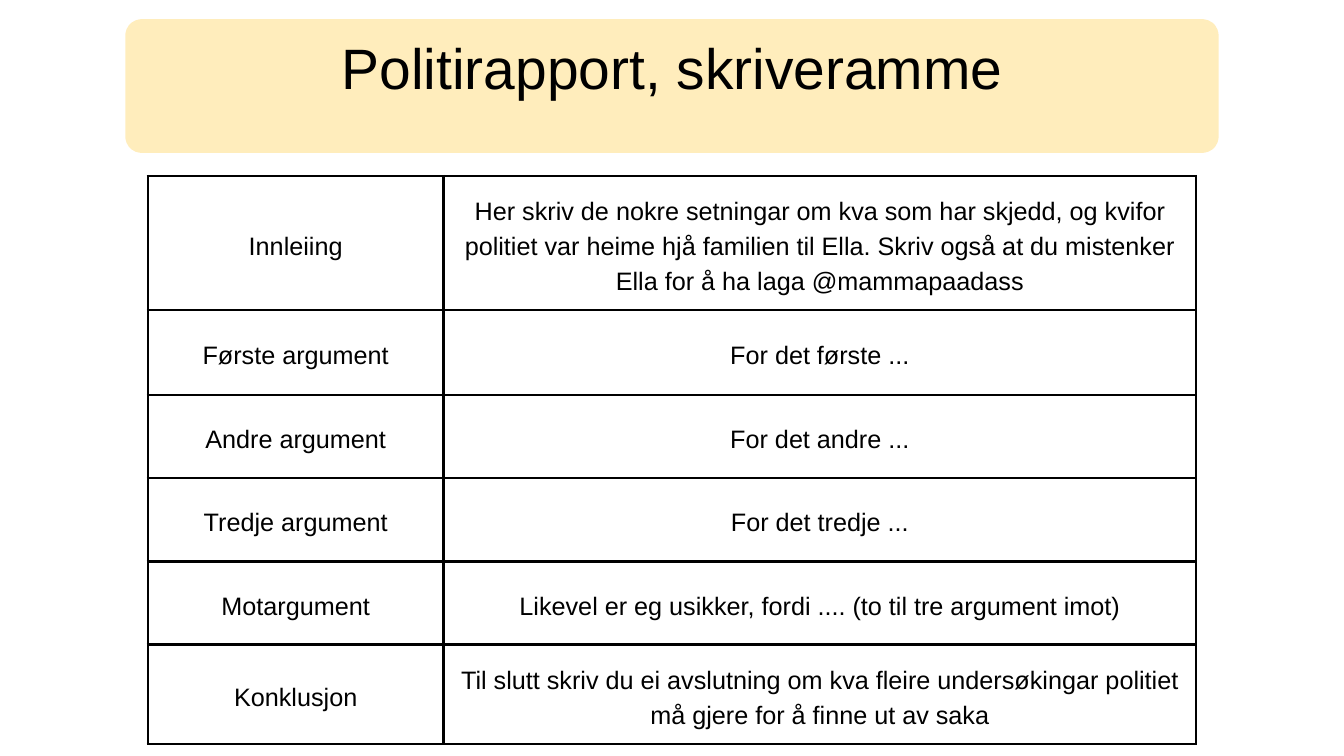
from typing import NamedTuple

from lxml.etree import SubElement
from pptx import Presentation
from pptx.dml.color import RGBColor
from pptx.enum.shapes import MSO_SHAPE
from pptx.enum.text import MSO_ANCHOR, PP_ALIGN
from pptx.oxml.ns import qn
from pptx.util import Pt

PX = 9144  # 100 px to the inch
COLORS = {"ink": "000000", "sand": "FFEDBC"}
SIDES = ("left", "top", "right", "bottom")


class Box(NamedTuple):
    left: int
    top: int
    width: int
    height: int


class Row(NamedTuple):
    height: int
    label: str
    body: str


TITLE = "Politirapport, skriveramme"
BANNER = Box(200, 42, 1600, 172)
HEAD = Box(200, -33, 1600, 247)
GRID = Box(220, 262, 1560, 844)
COLS = (440, 1120)
ROWS = (
    Row(198, "Innleiing",
        "Her skriv de nokre setningar om kva som har skjedd, og kvifor politiet var heime "
        "hjå familien til Ella. Skriv også at du mistenker Ella for å ha laga @mammapaadass"),
    Row(126, "Første argument", "For det første ..."),
    Row(124, "Andre argument", "For det andre ..."),
    Row(124, "Tredje argument", "For det tredje ..."),
    Row(124, "Motargument", "Likevel er eg usikker, fordi .... (to til tre argument imot)"),
    Row(148, "Konklusjon",
        "Til slutt skriv du ei avslutning om kva fleire undersøkingar politiet "
        "må gjere for å finne ut av saka"),
)


def scale(box: Box) -> list[int]:
    return [n * PX for n in box]


def color(name: str) -> RGBColor:
    return RGBColor.from_string(COLORS[name])


def write(frame, text: str, size: int, lead: float) -> None:
    """Put one centred paragraph in a text frame."""
    frame.word_wrap = True
    para = frame.paragraphs[0]
    para.alignment = PP_ALIGN.CENTER
    para.line_spacing = Pt(lead)
    run = para.add_run()
    run.text = text
    for key, value in {"name": "Arial", "size": Pt(size)}.items():
        setattr(run.font, key, value)
    run.font.color.rgb = color("ink")


def inset(owner, gap: int) -> None:
    for side in SIDES:
        setattr(owner, f"margin_{side}", gap * PX)
    owner.vertical_anchor = MSO_ANCHOR.MIDDLE


def frame_cell(cell, width: int) -> None:
    """Draw all four borders of a table cell."""
    props = cell._tc.get_or_add_tcPr()
    for i, tag in enumerate(("a:lnL", "a:lnR", "a:lnT", "a:lnB")):
        line = SubElement(props, qn(tag), w=str(Pt(width)))
        fill = SubElement(line, qn("a:solidFill"))
        SubElement(fill, qn("a:srgbClr"), val=COLORS["ink"])
        props.remove(line)
        props.insert(i, line)


def draw_head(slide) -> None:
    group = slide.shapes.add_group_shape()
    banner = group.shapes.add_shape(MSO_SHAPE.ROUNDED_RECTANGLE, *scale(BANNER))
    banner.adjustments[0] = 0.06
    banner.shadow.inherit = False
    banner.fill.solid()
    for part in (banner.fill.fore_color, banner.line.color):
        part.rgb = color("sand")
    banner.line.width = Pt(19.5)
    frame = group.shapes.add_textbox(*scale(HEAD)).text_frame
    inset(frame, 6)
    write(frame, TITLE, 61, 85.4)


def draw_grid(slide) -> None:
    table = slide.shapes.add_table(len(ROWS), len(COLS), *scale(GRID)).table
    for key in ("first_row", "horz_banding"):
        setattr(table, key, False)
    for col, width in zip(table.columns, COLS):
        col.width = width * PX
    for line, row in zip(table.rows, ROWS):
        line.height = row.height * PX
        for cell, text in zip(line.cells, (row.label, row.body)):
            cell.fill.background()
            inset(cell, 21)
            write(cell.text_frame, text, 27, 37.8)
            frame_cell(cell, 3)


def main() -> None:
    deck = Presentation()
    deck.slide_width, deck.slide_height = 2000 * PX, 1125 * PX
    slide = deck.slides.add_slide(deck.slide_layouts[6])
    draw_grid(slide)
    draw_head(slide)
    deck.save("out.pptx")


if __name__ == "__main__":
    main()
